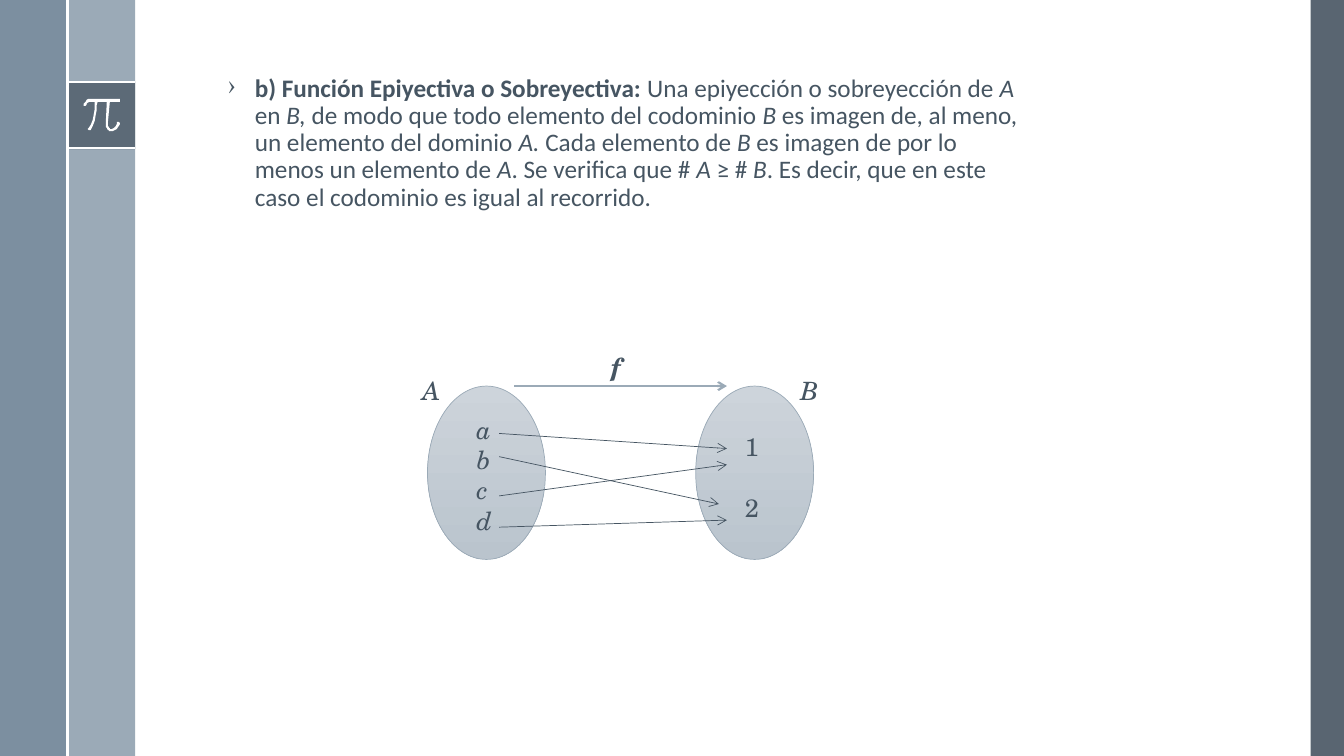
from dataclasses import dataclass

from lxml.etree import SubElement
from pptx import Presentation
from pptx.dml.color import RGBColor
from pptx.enum.shapes import MSO_CONNECTOR, MSO_SHAPE
from pptx.enum.text import MSO_ANCHOR
from pptx.oxml.ns import qn
from pptx.util import Inches, Pt


@dataclass(frozen=True)
class Theme:
    ink: RGBColor = RGBColor.from_string("465562")
    white: RGBColor = RGBColor.from_string("FFFFFF")
    slate: RGBColor = RGBColor.from_string("475562")
    steel: RGBColor = RGBColor.from_string("6A8093")
    mist: RGBColor = RGBColor.from_string("9BAAB7")
    oval_top: RGBColor = RGBColor.from_string("CDD4DB")
    oval_bottom: RGBColor = RGBColor.from_string("BAC4CD")
    text_size: Pt = Pt(18)
    thick: Pt = Pt(1.5)
    thin: Pt = Pt(0.5)
    body_font: str = "Calibri"
    math_font: str = "TeX Gyre Schola"


@dataclass(frozen=True)
class Box:
    left: float
    top: float
    width: float
    height: float

    def inside(self, left, top, width, height):
        """Box given by an offset from this one."""
        return Box(self.left + left, self.top + top, width, height)

    def lengths(self):
        return [Inches(n) for n in (self.left, self.top, self.width, self.height)]


THEME = Theme()

# Pi symbol in hundredths of an inch: two numbers are a line, six a cubic curve.
PI_START = (35, 0)
PI_STEPS = [
    (7, 0), (2, 0, 0, 5, 0, 6), (0, 6, 0, 7, 1, 7), (2, 7),
    (2, 7, 4, 3, 7, 3), (11, 3), (11, 7, 10, 24, 5, 29),
    (4, 30, 4, 30, 5, 31), (7, 31), (12, 25, 13, 7, 14, 3), (23, 3),
    (22, 24), (22, 24, 21, 28, 24, 31), (25, 32, 26, 32, 27, 32), (29, 32),
    (34, 32, 36, 25, 36, 24), (36, 24, 35, 23, 35, 23),
    (34, 23, 33, 23, 33, 24), (33, 24, 32, 29, 28, 30),
    (27, 30, 26, 30, 25, 29), (24, 28, 24, 25, 24, 24), (26, 3), (35, 3),
    (36, 3, 36, 2, 36, 2), (36, 1, 36, 0, 35, 0),
]

# Each span is its text and its style: b bold, i italic.
DEFINITION = [
    ("b) Función Epiyectiva o Sobreyectiva: ", "b"),
    ("Una epiyección o sobreyección de ", ""), ("A", "i"),
    (" en ", ""), ("B, ", "i"),
    ("de modo que todo elemento del codominio ", ""), ("B ", "i"),
    ("es imagen de, al meno, un elemento del dominio ", ""), ("A.", "i"),
    (" Cada elemento de ", ""), ("B", "i"),
    (" es imagen de por lo menos un elemento de ", ""), ("A", "i"),
    (". Se verifica que # ", ""), ("A", "i"), (" ≥ # ", ""), ("B", "i"),
    (". Es decir, que en este caso el codominio es igual al recorrido.", ""),
]


def add_band(shapes, box, color, opacity=100):
    band = shapes.add_shape(MSO_SHAPE.RECTANGLE, *box.lengths())
    band.shadow.inherit = False
    band.line.fill.background()
    band.fill.solid()
    band.fill.fore_color.rgb = color
    if opacity < 100:
        tint = band.fill._xPr.find(".//" + qn("a:srgbClr"))
        SubElement(tint, qn("a:alpha"), val=str(opacity * 1000))


def add_line(shapes, box, start, end, color, width, arrow=False):
    """Draw a line between two points given relative to the box."""
    ends = [Inches(n) for x, y in (start, end) for n in (box.left + x, box.top + y)]
    line = shapes.add_connector(MSO_CONNECTOR.STRAIGHT, *ends)
    line.line.color.rgb = color
    line.line.width = width
    if arrow:
        SubElement(line.line._get_or_add_ln(), qn("a:tailEnd"), type="arrow")
    SubElement(line._element.spPr, qn("a:effectLst"))


def flatten(start, steps, pieces=6):
    """Turn lines and cubic curves into a list of points."""
    points, here = [], start
    for step in steps:
        if len(step) == 2:
            points.append(step)
        else:
            corners = [here, step[:2], step[2:4], step[4:]]
            for n in range(1, pieces + 1):
                t = n / pieces
                weights = ((1 - t) ** 3, 3 * t * (1 - t) ** 2, 3 * t * t * (1 - t), t ** 3)
                points.append(tuple(sum(w * c[axis] for w, c in zip(weights, corners))
                                    for axis in (0, 1)))
        here = step[-2:]
    return points


def add_pi(shapes, box):
    builder = shapes.build_freeform(*PI_START, scale=Inches(0.01))
    builder.add_line_segments(flatten(PI_START, PI_STEPS), close=True)
    symbol = builder.convert_to_shape(Inches(box.left), Inches(box.top))
    symbol.shadow.inherit = False
    symbol.fill.solid()
    symbol.fill.fore_color.rgb = THEME.white
    symbol.line.fill.background()


def add_sidebar(shapes, box):
    half = box.width / 2
    add_band(shapes, box.inside(half, 0, half, box.height), THEME.mist)
    add_band(shapes, box.inside(0, 0, half, box.height), THEME.steel, 88)
    badge = box.inside(half, 0.81, half, 0.67)
    add_band(shapes, badge, THEME.slate, 75)
    for y in (0, 0.66):
        add_line(shapes, badge, (0, y), (half, y), THEME.white, THEME.thick)
    add_pi(shapes, badge.inside(0.16, 0.17, 0.37, 0.32))
    add_line(shapes, box, (half, 0), (half, box.height), THEME.white, THEME.thick)


def add_definition(shapes, box):
    frame = shapes.add_textbox(*box.lengths()).text_frame
    frame.word_wrap = True
    frame.vertical_anchor = MSO_ANCHOR.TOP
    para = frame.paragraphs[0]
    para.line_spacing = 0.9
    para.space_before = Pt(14)
    para.font.name = THEME.body_font
    para.font.size = THEME.text_size
    para.font.color.rgb = THEME.ink
    indent = Inches(0.27)
    layout = para._p.get_or_add_pPr()
    layout.set("marL", str(indent))
    layout.set("indent", str(-indent))
    bullet = SubElement(layout, qn("a:buChar"), char="›")
    layout.find(qn("a:defRPr")).addprevious(bullet)
    for text, style in DEFINITION:
        span = para.add_run()
        span.text = text
        span.font.bold = "b" in style
        span.font.italic = "i" in style


def add_math(shapes, box, lines, italic=True, bold=False, gap=Pt(0)):
    frame = shapes.add_textbox(*box.lengths()).text_frame
    frame.word_wrap = True
    for index, text in enumerate(lines):
        para = frame.paragraphs[0] if index == 0 else frame.add_paragraph()
        para.text = text
        para.space_before = gap if index else Pt(0)
        para.font.name = THEME.math_font
        para.font.size = THEME.text_size
        para.font.color.rgb = THEME.ink
        para.font.italic = italic
        para.font.bold = bold


def add_set(shapes, box):
    oval = shapes.add_shape(MSO_SHAPE.OVAL, *box.lengths())
    oval.shadow.inherit = False
    oval.fill.gradient()
    oval.fill.gradient_angle = 270
    for stop, color in zip(oval.fill.gradient_stops, (THEME.oval_top, THEME.oval_bottom)):
        stop.color.rgb = color
    oval.line.color.rgb = THEME.mist
    oval.line.width = THEME.thin


def add_mapping(shapes, box):
    diagram = shapes.add_group_shape().shapes
    for x in (0.15, 2.81):
        add_set(diagram, box.inside(x, 0.39, 1.17, 1.72))
    add_math(diagram, box.inside(0.54, 0.62, 0.31, 1.31), "abcd")
    add_math(diagram, box.inside(3.2, 0.79, 0.39, 1.01), "12", italic=False, gap=Pt(21.6))
    add_math(diagram, box.inside(0, 0.23, 0.39, 0.4), "A")
    add_math(diagram, box.inside(3.75, 0.23, 0.38, 0.4), "B")
    add_math(diagram, box.inside(1.87, 0, 0.39, 0.4), "f", bold=True)
    add_line(diagram, box, (1.01, 0.39), (3.12, 0.39), THEME.mist, THEME.thick, arrow=True)
    pairs = [(0.86, 3.12, 1.01), (1.48, 3.12, 1.17), (1.09, 3.04, 1.56), (1.79, 3.12, 1.72)]
    for start_y, end_x, end_y in pairs:
        add_line(diagram, box, (0.86, start_y), (end_x, end_y), THEME.ink, THEME.thin, arrow=True)


def main():
    deck = Presentation()
    deck.slide_width, deck.slide_height = Inches(13.33), Inches(7.5)
    page = deck.slides.add_slide(deck.slide_layouts[6])
    add_band(page.shapes, Box(13, 0, 0.33, 7.5), THEME.slate, 90)
    add_sidebar(page.shapes, Box(0, 0, 1.34, 7.5))
    add_definition(page.shapes, Box(2.16, 0.7, 8.17, 6.38))
    add_mapping(page.shapes, Box(4.09, 3.44, 4.13, 2.11))
    deck.save("out.pptx")


if __name__ == "__main__":
    main()
